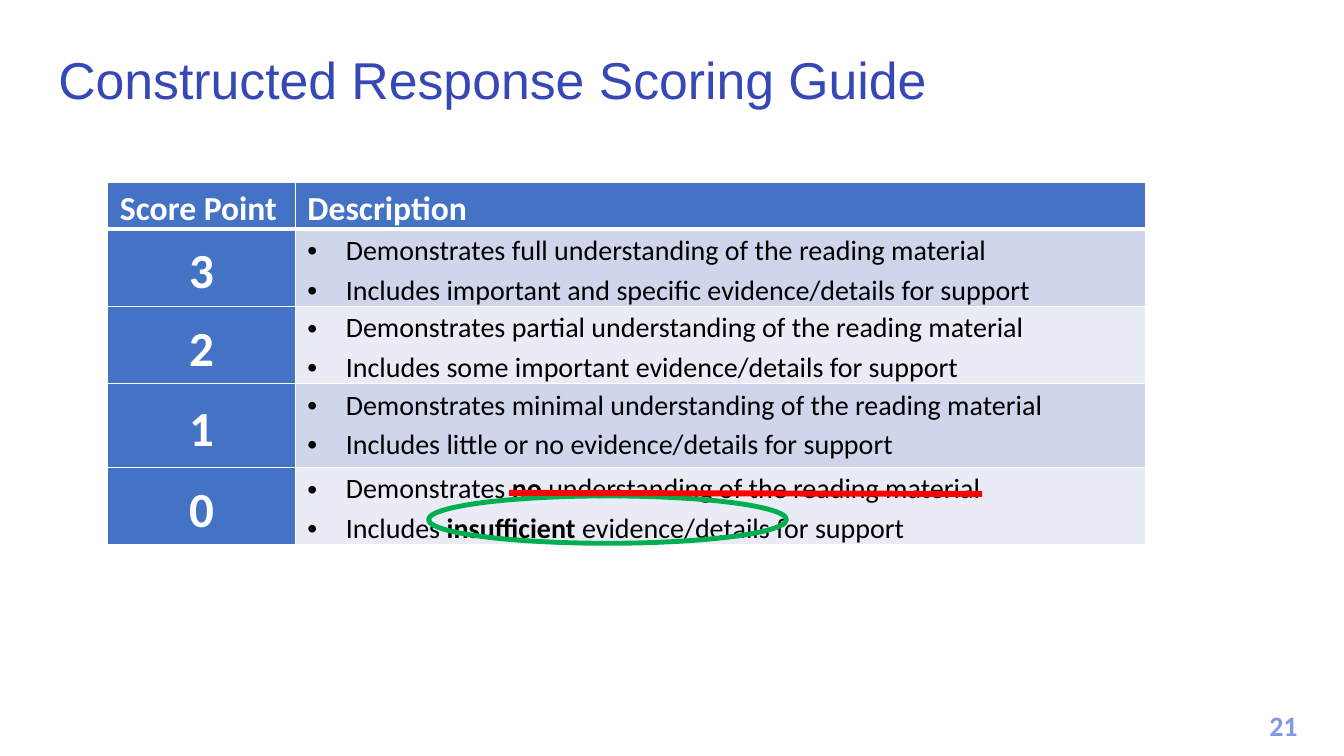
from lxml import etree
from pptx import Presentation
from pptx import util as u
from pptx.dml.color import RGBColor
from pptx.enum import shapes, text
from pptx.oxml import ns

PX = 9144  # EMU in one px, 100 px to the inch

WHITE = RGBColor(0xFF, 0xFF, 0xFF)
BLACK = RGBColor(0, 0, 0)
TITLE_BLUE = RGBColor(0x36, 0x47, 0xB6)
NUMBER_BLUE = RGBColor(0x83, 0x97, 0xE7)
HEADER_BLUE = RGBColor(0x44, 0x72, 0xC4)
BANDS = RGBColor(0xCF, 0xD5, 0xEA), RGBColor(0xE9, 0xEB, 0xF5)
GREEN = RGBColor(0, 0xB0, 0x50)
RED = RGBColor(0xFF, 0, 0)

LEFT, CENTER = text.PP_ALIGN.LEFT, text.PP_ALIGN.CENTER
TOP, MIDDLE, BOTTOM = (text.MSO_ANCHOR.TOP, text.MSO_ANCHOR.MIDDLE,
                       text.MSO_ANCHOR.BOTTOM)

COLUMNS = 186, 843
ROWS = 44, 71, 71, 83, 71
HEADINGS = "Score Point", "Description"
# Words between asterisks are bold.
SCORES = {
    "3": ["Demonstrates full understanding of the reading material",
          "Includes important and specific evidence/details for support"],
    "2": ["Demonstrates partial understanding of the reading material",
          "Includes some important evidence/details for support"],
    "1": ["Demonstrates minimal understanding of the reading material",
          "Includes little or no evidence/details for support"],
    "0": ["Demonstrates *no *understanding of the reading material",
          "Includes *insufficient* evidence/details for support"],
}


def px(*lengths):
    return [u.Emu(length * PX) for length in lengths]


class Slide:
    """Holds the page and its style, and draws each kind of element."""

    body_font = "Calibri"
    title_font = "Arial"
    line_spacing = 1.15

    def __init__(self, deck):
        self.page = deck.slides.add_slide(deck.slide_layouts[6])

    def style(self, span, size, color, bold=False, font=None):
        span.font.name = font or self.body_font
        span.font.size = u.Pt(size)
        span.font.bold = bold
        span.font.color.rgb = color

    def text(self, words, place, size, color, bold=False, font=None,
             align=LEFT, anchor=TOP, spacing=1.0):
        frame = self.page.shapes.add_textbox(*px(*place)).text_frame
        frame.word_wrap = True
        frame.vertical_anchor = anchor
        frame.text = words
        para = frame.paragraphs[0]
        para.alignment = align
        para.line_spacing = spacing
        self.style(para.runs[0], size, color, bold, font)

    def table(self, place, columns, rows):
        table = self.page.shapes.add_table(len(rows), len(columns), *px(*place)).table
        for column, width in zip(table.columns, px(*columns)):
            column.width = width
        for row, height in zip(table.rows, px(*rows)):
            row.height = height
        return table

    def border(self, cell, top, bottom):
        """Draws white cell borders; top and bottom are widths in points."""
        properties = cell._tc.get_or_add_tcPr()
        for side, width in (("L", 1), ("R", 1), ("T", top), ("B", bottom)):
            line = etree.SubElement(properties, ns.qn(f"a:ln{side}"), w=str(u.Pt(width)))
            fill = etree.SubElement(line, ns.qn("a:solidFill"))
            etree.SubElement(fill, ns.qn("a:srgbClr"), val=str(WHITE))

    def cell(self, cell, fill, top=1, bottom=1, anchor=TOP):
        self.border(cell, top, bottom)
        cell.fill.solid()
        cell.fill.fore_color.rgb = fill
        cell.margin_left, cell.margin_right = px(12, 12)
        cell.margin_top = cell.margin_bottom = 0
        cell.vertical_anchor = anchor

    def label(self, cell, words, size, align=LEFT):
        cell.text = words
        para = cell.text_frame.paragraphs[0]
        para.alignment = align
        para.line_spacing = self.line_spacing
        self.style(para.runs[0], size, WHITE, True)

    def bullets(self, cell, items, size=20):
        frame = cell.text_frame
        for index, item in enumerate(items):
            para = frame.add_paragraph() if index else frame.paragraphs[0]
            para.line_spacing = self.line_spacing
            properties = para._p.get_or_add_pPr()
            indent = 38 * PX
            properties.set("marL", str(indent))
            properties.set("indent", str(-indent))
            etree.SubElement(properties, ns.qn("a:buFont"), typeface="Arial")
            etree.SubElement(properties, ns.qn("a:buChar"), char="•")
            for part, words in enumerate(item.split("*")):
                span = para.add_run()
                span.text = words
                self.style(span, size, BLACK, part % 2 == 1)

    def ring(self, place, color, width):
        ring = self.page.shapes.add_shape(shapes.MSO_SHAPE.OVAL, *px(*place))
        ring.shadow.inherit = False
        ring.fill.background()
        ring.line.color.rgb = color
        ring.line.width = u.Pt(width)

    def line(self, start, end, color, width):
        line = self.page.shapes.add_connector(
            shapes.MSO_CONNECTOR.STRAIGHT, *px(*start, *end))
        line.line.color.rgb = color
        line.line.width = u.Pt(width)
        etree.SubElement(line._element.spPr, ns.qn("a:effectLst"))


def main():
    deck = Presentation()
    deck.slide_width, deck.slide_height = px(1333, 750)
    slide = Slide(deck)

    slide.text("21", (1242, 698, 62, 44), 20, NUMBER_BLUE, bold=True, align=CENTER)

    guide = slide.table((107, 181, sum(COLUMNS), sum(ROWS)), COLUMNS, ROWS)
    for column, heading in enumerate(HEADINGS):
        cell = guide.cell(0, column)
        slide.cell(cell, HEADER_BLUE, bottom=3)
        slide.label(cell, heading, 24)
    for row, (score, items) in enumerate(SCORES.items(), start=1):
        top = 3 if row == 1 else 1
        point, description = guide.cell(row, 0), guide.cell(row, 1)
        slide.cell(point, HEADER_BLUE, top, anchor=MIDDLE)
        slide.label(point, score, 35, CENTER)
        slide.cell(description, BANDS[(row - 1) % 2], top)
        slide.bullets(description, items)

    slide.ring((425, 492, 355, 47), GREEN, 3.5)
    slide.line((505, 489), (974, 490), RED, 4.25)
    slide.text("Constructed Response Scoring Guide", (48, 27, 1202, 88), 37,
               TITLE_BLUE, font=slide.title_font, anchor=BOTTOM, spacing=0.9)

    deck.save("out.pptx")


if __name__ == "__main__":
    main()
